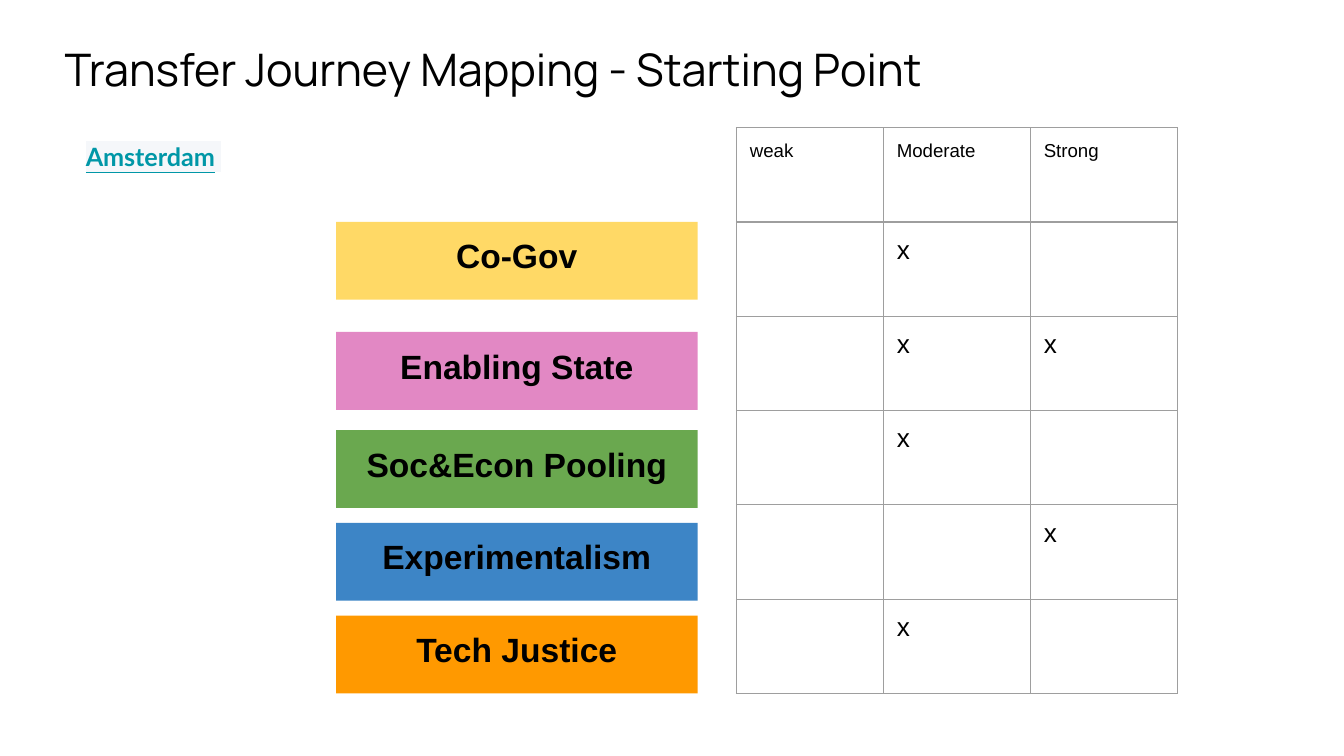
from lxml.etree import SubElement
from pptx import Presentation
from pptx.dml.color import RGBColor
from pptx.enum.shapes import MSO_SHAPE as Shape
from pptx.enum.text import MSO_ANCHOR as Anchor, MSO_AUTO_SIZE as AutoSize, PP_ALIGN as Align
from pptx.oxml import parse_xml
from pptx.oxml.ns import nsdecls, qn
from pptx.util import Inches, Pt

BLACK = RGBColor(0x00, 0x00, 0x00)
TEAL = RGBColor(0x00, 0x97, 0xA7)
SLATE = RGBColor(0x48, 0x57, 0x6E)
YELLOW = RGBColor(0xFF, 0xD9, 0x66)
PINK = RGBColor(0xE2, 0x88, 0xC4)
GREEN = RGBColor(0x6A, 0xA8, 0x4F)
BLUE = RGBColor(0x3D, 0x85, 0xC6)
ORANGE = RGBColor(0xFF, 0x99, 0x00)
BORDER = RGBColor(0x9E, 0x9E, 0x9E)
HIGHLIGHT = RGBColor(0xF5, 0xF7, 0xFA)

# Content
TITLE = "Transfer Journey Mapping - Starting Point"
CITY = "Amsterdam"
LEVELS = ["weak", "Moderate", "Strong"]
PRINCIPLES = [  # label, colour, top, levels marked
    ("Co-Gov", YELLOW, 1.65, ["Moderate"]),
    ("Enabling State", PINK, 2.47, ["Moderate", "Strong"]),
    ("Soc&Econ Pooling", GREEN, 3.2, ["Moderate"]),
    ("Experimentalism", BLUE, 3.89, ["Strong"]),
    ("Tech Justice", ORANGE, 4.58, ["Moderate"]),
]
TABLE_WIDTH, TABLE_HEIGHT = Inches(3.28), Inches(4.21)


def format_run(run, size, color=BLACK, name="Arial", bold=False):
    run.font.size = Pt(size)
    run.font.name = name
    run.font.bold = bold
    run.font.color.rgb = color


def set_frame(text_frame):
    text_frame.word_wrap = True
    text_frame.auto_size = AutoSize.NONE
    text_frame.vertical_anchor = Anchor.TOP
    text_frame.margin_left = text_frame.margin_right = Inches(0.1)
    text_frame.margin_top = text_frame.margin_bottom = Inches(0.1)


def set_highlight(run, color):
    fill = run.font._element.find(qn("a:solidFill"))
    fill.addnext(parse_xml(
        f'<a:highlight {nsdecls("a")}><a:srgbClr val="{color}"/></a:highlight>'))


def set_borders(cell):
    properties = cell._tc.get_or_add_tcPr()
    for position, side in enumerate(("lnL", "lnR", "lnT", "lnB")):
        line = parse_xml(f'<a:{side} {nsdecls("a")} w="{Pt(0.75)}"/>')
        fill = SubElement(line, qn("a:solidFill"))
        SubElement(fill, qn("a:srgbClr"), val=str(BORDER))
        properties.insert(position, line)


def add_title(slide):
    title = slide.shapes.title
    title.left, title.top = Inches(0.38), Inches(0.21)
    title.width, title.height = Inches(8.32), Inches(0.75)
    set_frame(title.text_frame)
    title.text_frame.text = TITLE
    paragraph = title.text_frame.paragraphs[0]
    paragraph.alignment = Align.LEFT
    format_run(paragraph.runs[0], 24, name="Manrope")


def add_city(slide):
    box = slide.shapes.add_textbox(Inches(0.54), Inches(0.95), Inches(2.51), Inches(0.68))
    set_frame(box.text_frame)
    paragraph = box.text_frame.paragraphs[0]
    for text, color, underline in ((CITY, TEAL, True), (" ", SLATE, False)):
        run = paragraph.add_run()
        run.text = text
        format_run(run, 13.5, color, "Lato", bold=True)
        run.font.underline = underline
        set_highlight(run, HIGHLIGHT)


def add_principles(slide):
    for label, color, top, _ in PRINCIPLES:
        bar = slide.shapes.add_shape(
            Shape.RECTANGLE, Inches(2.5), Inches(top), Inches(2.69), Inches(0.58))
        bar.shadow.inherit = False
        bar.fill.solid()
        bar.fill.fore_color.rgb = color
        bar.line.fill.background()
        set_frame(bar.text_frame)
        bar.text_frame.text = label
        paragraph = bar.text_frame.paragraphs[0]
        paragraph.alignment = Align.CENTER
        format_run(paragraph.runs[0], 18, bold=True)


def add_ratings(slide):
    rows = [(LEVELS, 10)]
    for *_, marked in PRINCIPLES:
        rows.append((["x" if level in marked else "" for level in LEVELS], 14))
    table = slide.shapes.add_table(
        len(rows), len(LEVELS), Inches(5.48), Inches(0.95),
        TABLE_WIDTH, TABLE_HEIGHT).table
    table.first_row = table.horz_banding = False
    for row, (texts, size) in zip(table.rows, rows):
        for cell, text in zip(row.cells, texts):
            cell.margin_left = cell.margin_right = Inches(0.1)
            cell.margin_top = cell.margin_bottom = Inches(0.1)
            cell.fill.background()
            set_borders(cell)
            if text:
                cell.text = text
                format_run(cell.text_frame.paragraphs[0].runs[0], size)


def main():
    presentation = Presentation()
    # Widescreen, 16:9
    presentation.slide_width = Inches(10)
    presentation.slide_height = Inches(10) * 9 // 16
    slide = presentation.slides.add_slide(presentation.slide_layouts[5])
    add_title(slide)
    add_city(slide)
    add_principles(slide)
    add_ratings(slide)
    presentation.save("out.pptx")


if __name__ == "__main__":
    main()
